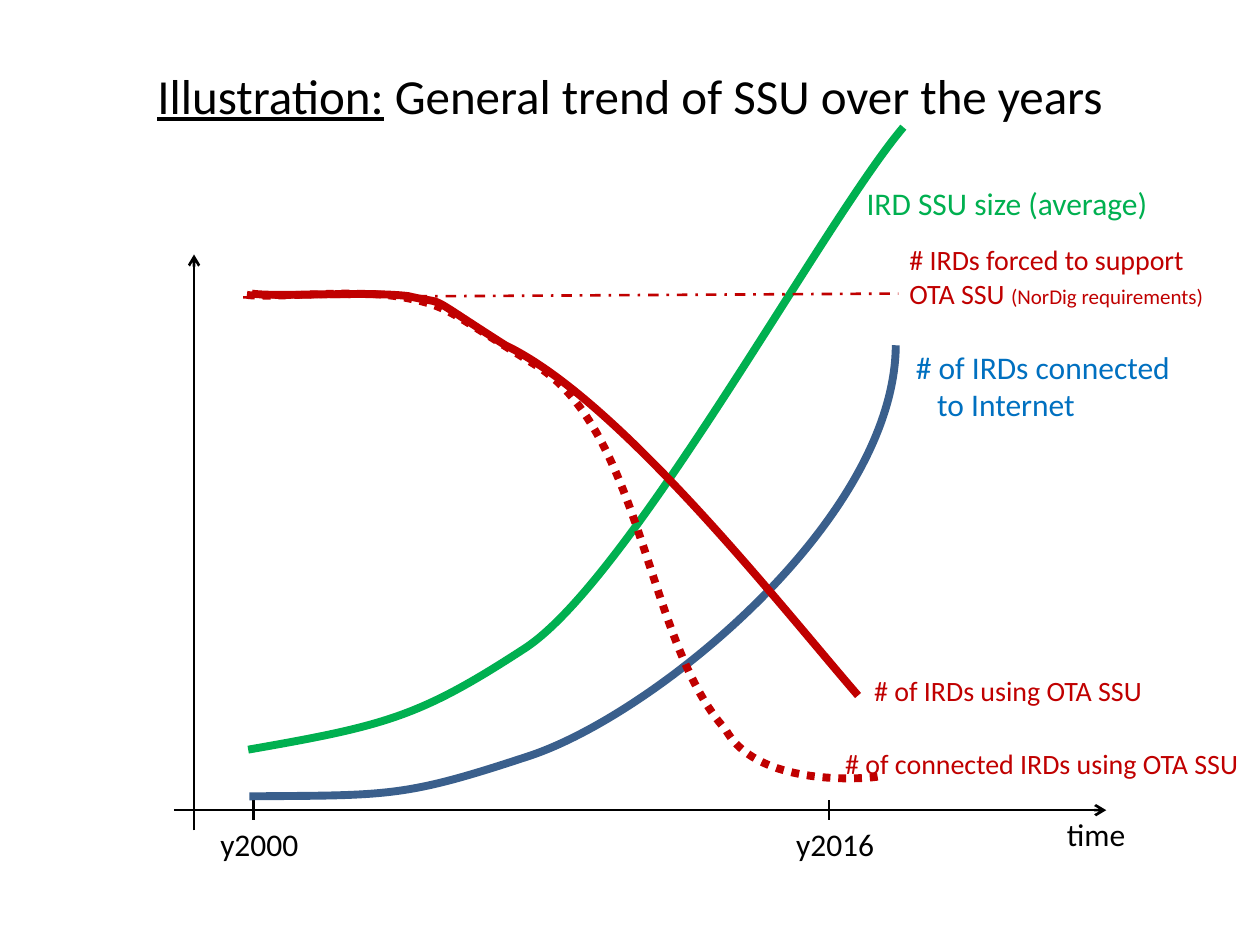
import pptx
import pptx.dml.color
import pptx.enum.dml
import pptx.enum.shapes
import pptx.enum.text
import pptx.oxml.ns
import pptx.oxml.xmlchemy
import pptx.util
from pptx.util import Inches

BLACK = pptx.dml.color.RGBColor(0x00, 0x00, 0x00)
GREEN = pptx.dml.color.RGBColor(0x00, 0xB0, 0x50)
BLUE = pptx.dml.color.RGBColor(0x00, 0x70, 0xC0)
DARK_BLUE = pptx.dml.color.RGBColor(0x3A, 0x5F, 0x8C)
RED = pptx.dml.color.RGBColor(0xC0, 0x00, 0x00)

DASH = pptx.enum.dml.MSO_LINE
QN = pptx.oxml.ns.qn
new_element = pptx.oxml.xmlchemy.OxmlElement


def add_text(paragraph, text, size=18, color=BLACK, font="Calibri", underline=False):
    """Append one formatted run to a paragraph."""
    run = paragraph.add_run()
    run.text = text
    run.font.name = font
    run.font.size = pptx.util.Pt(size)
    run.font.color.rgb = color
    run.font.underline = underline


class TrendSlide:
    """Holds the current slide and its line style."""

    thin, thick = 1.5, 4.5

    def __init__(self, presentation):
        self.slide = presentation.slides.add_slide(presentation.slide_layouts[5])
        self.shapes = self.slide.shapes

    def title(self, underlined, rest):
        shape = self.shapes.title
        shape.left, shape.top = Inches(0.5), Inches(0.3)
        shape.width, shape.height = Inches(9), Inches(0.9)
        frame = shape.text_frame
        frame.vertical_anchor = pptx.enum.text.MSO_ANCHOR.MIDDLE
        paragraph = frame.paragraphs[0]
        paragraph.alignment = pptx.enum.text.PP_ALIGN.CENTER
        add_text(paragraph, underlined, size=28, underline=True)
        add_text(paragraph, rest, size=28)

    def style_line(self, line, color, width, dash=None):
        line.color.rgb = color
        line.width = pptx.util.Pt(width)
        if dash is not None:
            line.dash_style = dash

    def line(self, start, end, color=BLACK, dash=None, arrow=False):
        connector = self.shapes.add_connector(
            pptx.enum.shapes.MSO_CONNECTOR.STRAIGHT, *map(Inches, start + end))
        self.style_line(connector.line, color, self.thin, dash)
        properties = connector._element.spPr
        if arrow:
            tail = new_element("a:tailEnd")
            tail.set("type", "arrow")
            properties.find(QN("a:ln")).append(tail)
        properties.append(new_element("a:effectLst"))

    def curve(self, points, color, dash=None):
        """Draw cubic segments: a start point, then three points for each."""
        points = [(Inches(x), Inches(y)) for x, y in points]
        builder = self.shapes.build_freeform(*points[0])
        builder.add_line_segments(points[1:], close=False)
        shape = builder.convert_to_shape()
        shape.shadow.inherit = False
        shape.fill.background()
        self.style_line(shape.line, color, self.thick, dash)
        # Join every three straight steps into one Bezier segment
        steps = list(shape._element.iter(QN("a:lnTo")))
        for first in range(0, len(steps), 3):
            bezier = new_element("a:cubicBezTo")
            steps[first].addprevious(bezier)
            for step in steps[first:first + 3]:
                bezier.append(step[0])
                step.getparent().remove(step)

    def label(self, box, *lines, size=18, color=BLACK, second_indent=0):
        """Add a text box; each line is a list of (text, size) or a string."""
        frame = self.shapes.add_textbox(*map(Inches, box)).text_frame
        frame.word_wrap = False
        frame.auto_size = pptx.enum.text.MSO_AUTO_SIZE.SHAPE_TO_FIT_TEXT
        for index, line in enumerate(lines):
            paragraph = frame.add_paragraph() if index else frame.paragraphs[0]
            if index and second_indent:
                paragraph._p.get_or_add_pPr().set("marL", str(Inches(second_indent)))
            runs = [(line, size)] if isinstance(line, str) else line
            for text, run_size in runs:
                add_text(paragraph, text, size=run_size, color=color)


def main():
    presentation = pptx.Presentation()
    presentation.slide_width, presentation.slide_height = Inches(10), Inches(7.5)
    trend = TrendSlide(presentation)
    trend.title("Illustration:", " General trend of SSU over the years")

    # Axes
    trend.line((1.38, 6.43), (8.78, 6.43), arrow=True)
    trend.line((1.54, 6.59), (1.54, 2.02), arrow=True)

    # Year marks
    for year, x in (("y2000", 2.01), ("y2016", 6.58)):
        trend.line((x, 6.35), (x, 6.51))
        trend.label((x - 0.36, 6.5, 0.83, 0.4), year)

    # Update size
    trend.label((6.78, 1.41, 2.46, 0.4), "IRD SSU size (average)", color=GREEN)
    trend.curve([(1.97, 5.95), (3.06, 5.76), (3.33, 5.69), (4.16, 5.15),
                 (5, 4.61), (6.54, 1.75), (7.17, 1.01)], GREEN)

    # Receivers on the Internet
    trend.label((7.17, 2.71, 2.3, 0.71), "# of IRDs connected", "to Internet",
                color=BLUE, second_indent=0.17)
    trend.curve([(1.98, 6.32), (3.1, 6.31), (3.2, 6.33), (4.2, 6),
                 (5.2, 5.67), (7.1, 4.12), (7.11, 2.74)], DARK_BLUE)

    # Receivers using over-the-air updates, and the required level
    trend.curve([(2, 2.33), (2.19, 2.36), (2.92, 2.31), (3.24, 2.35),
                 (3.58, 2.43), (3.32, 2.3), (4.01, 2.74),
                 (4.91, 3.17), (6.18, 4.79), (6.81, 5.52)], RED)
    trend.label((7.12, 1.88, 2.56, 0.64), "# IRDs forced to support",
                [("OTA SSU ", 16), ("(NorDig requirements)", 12)], size=16, color=RED)
    trend.line((1.93, 2.36), (7.13, 2.33), color=RED, dash=DASH.DASH_DOT)
    trend.label((6.84, 5.3, 2.4, 0.37), "# of IRDs using OTA SSU", size=16, color=RED)
    trend.label((8.37, 6.42, 0.67, 0.4), "time")

    # Connected receivers using over-the-air updates
    trend.curve([(1.96, 2.34), (2.15, 2.37), (2.83, 2.29), (3.2, 2.36),
                 (3.56, 2.43), (3.54, 2.46), (4.24, 2.89),
                 (5.1, 3.41), (5.13, 5.1), (5.76, 5.79),
                 (6.03, 6.28), (6.99, 6.17), (6.98, 6.16)], RED, DASH.ROUND_DOT)
    trend.label((6.61, 5.88, 3.41, 0.37), "# of connected IRDs using OTA SSU",
                size=16, color=RED)

    presentation.save("out.pptx")


if __name__ == "__main__":
    main()
